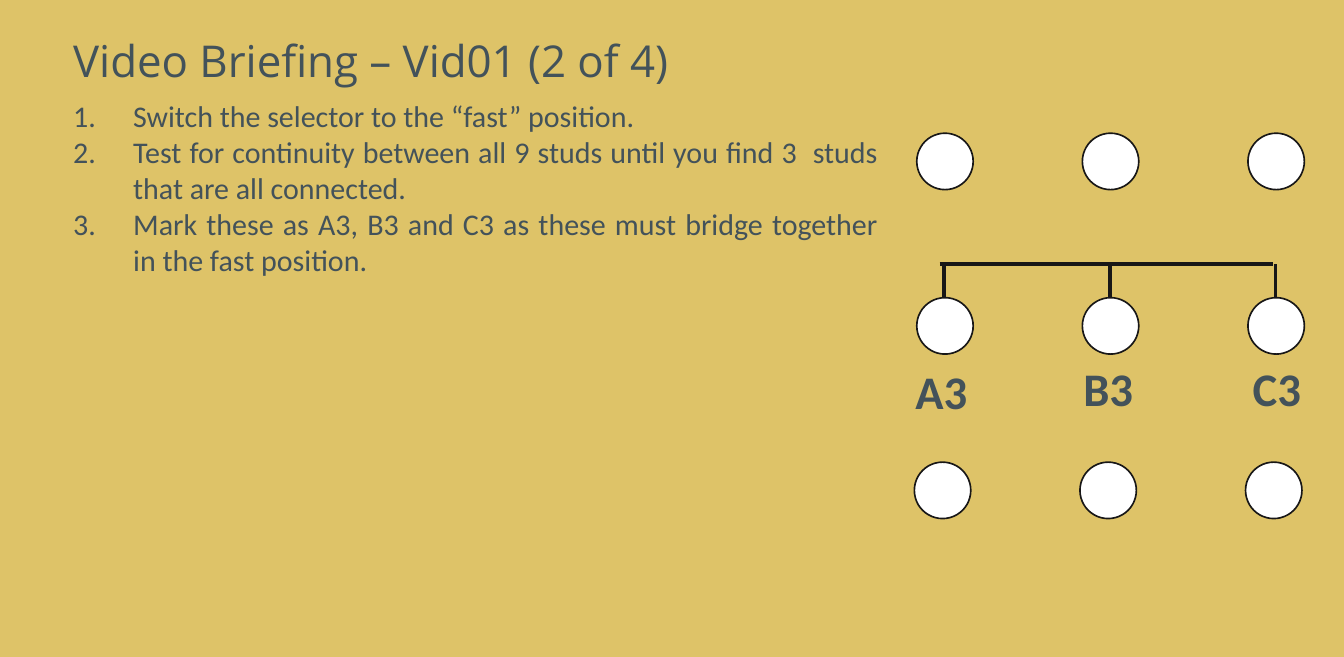
from dataclasses import dataclass

from lxml.etree import SubElement
from pptx import Presentation
from pptx.dml.color import RGBColor
from pptx.enum.shapes import MSO_CONNECTOR as CONN, MSO_SHAPE as SHAPE
from pptx.enum.text import MSO_ANCHOR as ANCHOR, MSO_AUTO_SIZE as FIT, PP_ALIGN as ALIGN
from pptx.oxml.ns import qn
from pptx.util import Inches, Pt


@dataclass(frozen=True)
class Theme:
    back: RGBColor = RGBColor(0xDE, 0xC3, 0x68)
    text: RGBColor = RGBColor(0x43, 0x52, 0x5A)
    stud: RGBColor = RGBColor(0xFF, 0xFF, 0xFF)
    ink: RGBColor = RGBColor(0x18, 0x17, 0x17)
    title_font: str = "Open Sans"
    body_font: str = "Calibri"
    title_size: float = 26.3
    body_size: float = 18
    label_size: float = 28
    outline: float = 1
    wire: float = 2.25


class Board:
    """Holds the theme and the current slide."""

    def __init__(self, slide, theme):
        self.slide, self.theme = slide, theme
        fill = slide.background.fill
        fill.solid()
        fill.fore_color.rgb = theme.back

    def place(self, sp, x, y, w, h):
        sp.left, sp.top, sp.width, sp.height = map(Inches, (x, y, w, h))

    def run(self, p, text, font, size, bold=False):
        r = p.add_run()
        r.text = text
        r.font.name, r.font.size, r.font.bold = font, Pt(size), bold
        r.font.color.rgb = self.theme.text

    def title(self, text, *box):
        sp = self.slide.shapes.title
        self.place(sp, *box)
        tf = sp.text_frame
        tf.auto_size, tf.vertical_anchor = FIT.NONE, ANCHOR.MIDDLE
        p = tf.paragraphs[0]
        p.alignment, p.line_spacing = ALIGN.LEFT, 0.9
        self.run(p, text, self.theme.title_font, self.theme.title_size)

    def numbered_list(self, items, *box):
        sp = self.slide.placeholders[1]
        self.place(sp, *box)
        tf = sp.text_frame
        tf.auto_size = FIT.NONE
        for i, item in enumerate(items):
            p = tf.add_paragraph() if i else tf.paragraphs[0]
            p.alignment, p.space_before = ALIGN.JUSTIFY, Pt(0)
            pPr = p._p.get_or_add_pPr()
            pPr.set("marL", str(Inches(0.5)))
            pPr.set("indent", str(-Inches(0.5)))
            SubElement(pPr, qn("a:buFont"), typeface="+mj-lt")
            SubElement(pPr, qn("a:buAutoNum"), type="arabicPeriod")
            self.run(p, item, self.theme.body_font, self.theme.body_size)

    def stud(self, x, y, size):
        sp = self.slide.shapes.add_shape(SHAPE.OVAL, *map(Inches, (x, y, size, size)))
        sp.shadow.inherit = False
        sp.fill.solid()
        sp.fill.fore_color.rgb = self.theme.stud
        sp.line.color.rgb = self.theme.ink
        sp.line.width = Pt(self.theme.outline)

    def label(self, text, *box):
        sp = self.slide.shapes.add_textbox(*map(Inches, box))
        tf = sp.text_frame
        tf.word_wrap, tf.auto_size = False, FIT.SHAPE_TO_FIT_TEXT
        self.run(tf.paragraphs[0], text, self.theme.body_font, self.theme.label_size, True)

    def wire(self, *ends):
        line = self.slide.shapes.add_connector(CONN.STRAIGHT, *map(Inches, ends))
        line.line.color.rgb = self.theme.ink
        line.line.width = Pt(self.theme.wire)
        SubElement(line._element.spPr, qn("a:effectLst"))


def main():
    prs = Presentation()
    prs.slide_width, prs.slide_height = Inches(11.2), Inches(5.473)
    board = Board(prs.slides.add_slide(prs.slide_layouts[1]), Theme())

    # Title and instructions
    board.title("Video Briefing – Vid01 (2 of 4)", 0.51, 0, 9.66, 1.06)
    board.numbered_list([
        "Switch the selector to the “fast” position.",
        "Test for continuity between all 9 studs until you find 3  studs that are all connected.",
        "Mark these as A3, B3 and C3 as these must bridge together in the fast position.",
    ], 0.51, 0.76, 6.91, 2.22)

    # Grid of nine studs
    size, pitch_x, pitch_y = 0.47, 1.38, 1.37
    top = 1.11
    for row, left in enumerate((7.64, 7.64, 7.62)):
        for col in range(3):
            board.stud(left + col * pitch_x, top + row * pitch_y, size)

    # Labels under the middle row
    for text, x, y, w in (("A3", 7.53, 2.97, 0.64),
                          ("B3", 8.93, 2.95, 0.62),
                          ("C3", 10.34, 2.95, 0.61)):
        board.label(text, x, y, w, 0.57)

    # Bridge joining the middle row
    bridge_y = 2.2
    board.wire(7.83, bridge_y, 10.61, bridge_y)
    for col in range(3):
        x = 7.87 + col * pitch_x
        board.wire(x, bridge_y, x, top + pitch_y)

    prs.save("out.pptx")


if __name__ == "__main__":
    main()
